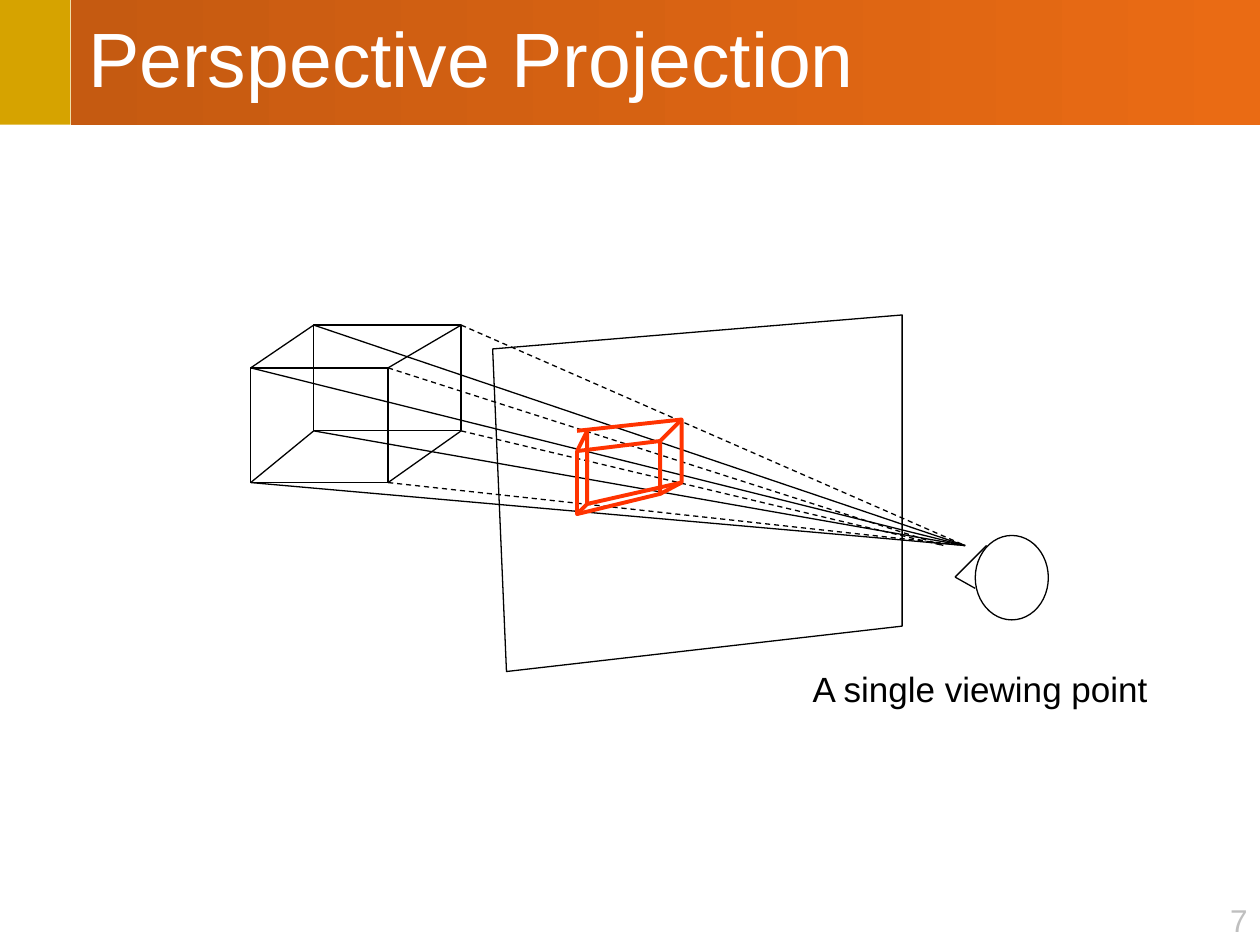
from dataclasses import dataclass

from lxml import etree
from pptx import Presentation
from pptx.dml.color import RGBColor
from pptx.enum.dml import MSO_LINE
from pptx.enum.shapes import MSO_CONNECTOR, MSO_SHAPE
from pptx.enum.text import MSO_ANCHOR, MSO_AUTO_SIZE, PP_ALIGN
from pptx.oxml.ns import qn
from pptx.util import Inches, Pt

DASH = MSO_LINE.DASH
STRAIGHT = MSO_CONNECTOR.STRAIGHT
RECTANGLE, OVAL = MSO_SHAPE.RECTANGLE, MSO_SHAPE.OVAL
LEFT, RIGHT = PP_ALIGN.LEFT, PP_ALIGN.RIGHT
MIDDLE = MSO_ANCHOR.MIDDLE
FIXED, GROW = MSO_AUTO_SIZE.NONE, MSO_AUTO_SIZE.SHAPE_TO_FIT_TEXT
TITLE_ONLY = 5


@dataclass(frozen=True)
class Theme:
    font: str = "Arial"
    gold: str = "D6A300"
    band_start: str = "C55A11"
    band_end: str = "EA6B14"
    title: str = "FFFFFF"
    ink: str = "000000"
    image: str = "FF3300"
    number: str = "BFBFBF"
    title_size: int = 44
    label_size: int = 20
    number_size: int = 18
    thin: float = 0.75
    thick: float = 2.25


def rgb(value):
    return RGBColor.from_string(value)


def inches(values):
    return [Inches(value) for value in values]


class Sketch:
    def __init__(self, slide, theme):
        self.slide = slide
        self.shapes = slide.shapes
        self.theme = theme

    def style_text(self, paragraph, size, color, align):
        paragraph.alignment = align
        font = paragraph.runs[0].font
        font.name, font.size = self.theme.font, Pt(size)
        font.color.rgb = rgb(color)

    def style_line(self, line, projected=False):
        """Thin ink for the scene, thick red for its projected image."""
        theme = self.theme
        line.color.rgb = rgb(theme.image if projected else theme.ink)
        line.width = Pt(theme.thick if projected else theme.thin)

    def title(self, text, box):
        title = self.shapes.title
        title.left, title.top, title.width, title.height = inches(box)
        title.fill.gradient()
        title.fill.gradient_angle = 0
        ends = (self.theme.band_start, self.theme.band_end)
        for stop, color in zip(title.fill.gradient_stops, ends):
            stop.color.rgb = rgb(color)
        frame = title.text_frame
        frame.text = text
        frame.auto_size, frame.vertical_anchor = FIXED, MIDDLE
        paragraph = frame.paragraphs[0]
        paragraph.line_spacing = 0.9
        self.style_text(paragraph, self.theme.title_size, self.theme.title, LEFT)
        paragraph._p.get_or_add_pPr().set("marL", str(Inches(0.04)))

    def text(self, text, box, size, color, align=LEFT):
        frame = self.shapes.add_textbox(*inches(box)).text_frame
        frame.text = text
        frame.word_wrap, frame.auto_size = False, GROW
        self.style_text(frame.paragraphs[0], size, color, align)

    def block(self, box, color):
        block = self.shapes.add_shape(RECTANGLE, *inches(box))
        block.shadow.inherit = False
        block.fill.solid()
        block.fill.fore_color.rgb = rgb(color)
        block.line.fill.background()

    def outline(self, kind, box):
        outline = self.shapes.add_shape(kind, *inches(box))
        outline.shadow.inherit = False
        outline.fill.background()
        self.style_line(outline.line)

    def line(self, start, end, projected=False, dashed=False):
        connector = self.shapes.add_connector(STRAIGHT, *inches(start + end))
        self.style_line(connector.line, projected)
        if dashed:
            connector.line.dash_style = DASH
        etree.SubElement(connector._element.spPr, qn("a:effectLst"))

    def polygon(self, points, projected=False, close=True):
        start, *rest = [inches(point) for point in points]
        builder = self.shapes.build_freeform(*start)
        builder.add_line_segments(rest, close=close)
        polygon = builder.convert_to_shape()
        polygon.shadow.inherit = False
        polygon.fill.background()
        self.style_line(polygon.line, projected)


def corners(left, top, right, bottom):
    """Corners clockwise from the top left."""
    return [(left, top), (right, top), (right, bottom), (left, bottom)]


def draw_cube(sketch, front, back):
    for left, top, right, bottom in (front, back):
        sketch.outline(RECTANGLE, (left, top, right - left, bottom - top))
    for near, far in zip(corners(*front), corners(*back)):
        sketch.line(near, far)


def draw_rays(sketch, front, back, eye):
    """Rays from the right-hand corners are dashed; two stop short of the eye."""
    short_of_eye = (7.49, eye[1])
    front_left_top, front_right_top, front_right_low, front_left_low = corners(*front)
    back_left_top, back_right_top, back_right_low, back_left_low = corners(*back)
    for corner, end in ((front_right_low, eye), (back_right_low, short_of_eye),
                        (front_right_top, short_of_eye), (back_right_top, eye)):
        sketch.line(corner, end, dashed=True)
    for corner in (back_left_top, front_left_top, back_left_low, front_left_low):
        sketch.line(corner, eye)


def draw_projected_cube(sketch):
    front = [(4.58, 3.58), (5.24, 3.5), (5.24, 3.92), (4.58, 4.08)]
    back = [(4.66, 3.42), (5.41, 3.33), (5.41, 3.83), (4.66, 4)]
    sketch.polygon(front, projected=True)
    back_path = [(4.58, 3.42)] + back[1:] + back[:1]
    sketch.polygon(back_path, projected=True, close=False)
    for near, far in zip(front, back):
        sketch.line(near, far, projected=True)


def draw_viewer(sketch):
    sketch.outline(OVAL, (7.74, 4.25, 0.58, 0.67))
    nose_tip = (7.58, 4.58)
    sketch.line((7.83, 4.33), nose_tip)
    sketch.line(nose_tip, (7.74, 4.67))


def main():
    deck = Presentation()
    deck.slide_width, deck.slide_height = Inches(10), Inches(7.5)
    theme = Theme()
    sketch = Sketch(deck.slides.add_slide(deck.slide_layouts[TITLE_ONLY]), theme)

    sketch.block((0, 0, 0.56, 0.99), theme.gold)
    sketch.title("Perspective Projection", (0.56, 0, 9.44, 0.99))
    sketch.text("7", (9.49, 7.1, 0.51, 0.4), theme.number_size, theme.number, RIGHT)

    cube_front = (1.99, 2.92, 3.08, 3.83)
    cube_back = (2.49, 2.58, 3.66, 3.42)
    draw_cube(sketch, cube_front, cube_back)
    draw_rays(sketch, cube_front, cube_back, eye=(7.66, 4.33))
    draw_projected_cube(sketch)
    image_plane = [(3.91, 2.77), (7.16, 2.5), (7.16, 4.97), (4.02, 5.33)]
    sketch.polygon(image_plane)
    draw_viewer(sketch)
    sketch.text("A single viewing point", (6.35, 5.25, 2.89, 0.44),
                theme.label_size, theme.ink)

    deck.save("out.pptx")


if __name__ == "__main__":
    main()
